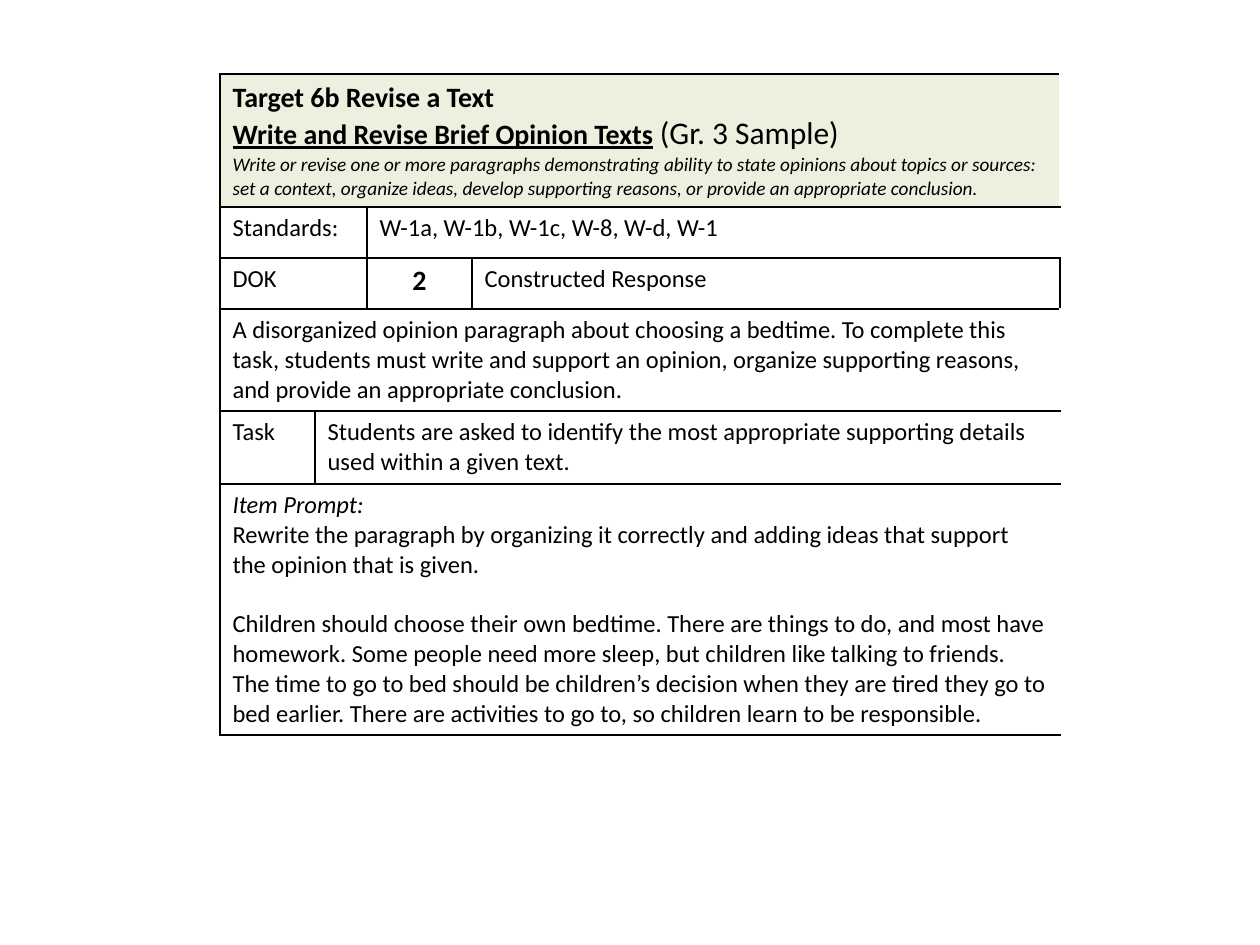
from dataclasses import dataclass

from lxml.etree import SubElement
from pptx import Presentation
from pptx.dml.color import RGBColor
from pptx.enum.text import PP_ALIGN
from pptx.oxml.ns import qn
from pptx.util import Pt

EMU_PER_PX = 914400 / 126


@dataclass(frozen=True)
class Theme:
    font: str = "Calibri"
    ink: str = "000000"
    heading_fill: str = "EBF1DE"
    body: int = 14
    heading: int = 16
    grade: int = 18
    note: int = 11
    border: int = 1
    prompt_gap: int = 17


THEME = Theme()
COLUMN_WIDTHS = (95, 52, 105, 588)
ROW_HEIGHTS = (133, 51, 51, 102, 73, 251)


def px(length):
    return round(length * EMU_PER_PX)


def write(cell, text, size=THEME.body, bold=False, italic=False, underline=False,
          align=PP_ALIGN.LEFT, space_before=0, same_line=False):
    """Add text to a cell, as a new paragraph unless same_line is set."""
    paragraph = cell.text_frame.paragraphs[-1]
    if paragraph.runs and not same_line:
        paragraph = cell.text_frame.add_paragraph()
    if not same_line:
        paragraph.alignment = align
        paragraph.space_before = Pt(space_before)
    run = paragraph.add_run()
    run.text = text
    font = run.font
    font.name, font.size = THEME.font, Pt(size)
    font.bold, font.italic, font.underline = bold, italic, underline
    font.color.rgb = RGBColor.from_string(THEME.ink)


def set_borders(cell, sides):
    properties = cell._tc.get_or_add_tcPr()
    for position, side in enumerate(sides):
        line = SubElement(properties, qn(f"a:ln{side}"), w=str(Pt(THEME.border)))
        fill = SubElement(line, qn("a:solidFill"))
        SubElement(fill, qn("a:srgbClr"), val=THEME.ink)
        properties.insert(position, line)


def add_grid(slide, left, top):
    table = slide.shapes.add_table(
        len(ROW_HEIGHTS), len(COLUMN_WIDTHS), px(left), px(top),
        px(sum(COLUMN_WIDTHS)), px(sum(ROW_HEIGHTS))).table
    table.first_row = table.horz_banding = False
    for column, width in zip(table.columns, COLUMN_WIDTHS):
        column.width = px(width)
    for row, height in zip(table.rows, ROW_HEIGHTS):
        row.height = px(height)
    return table


def split_row(table, row, *spans, fill=None):
    """Merge a row's columns by spans and return the first cell of each span."""
    starts = []
    first = 0
    for span in spans:
        last = first + span - 1
        start = table.cell(row, first)
        if span > 1:
            start.merge(table.cell(row, last))
        for column in range(first, last + 1):
            cell = table.cell(row, column)
            if fill:
                cell.fill.solid()
                cell.fill.fore_color.rgb = RGBColor.from_string(fill)
            else:
                cell.fill.background()
            sides = ["L"] if column == first else []
            sides += ["R"] if column == last else []
            set_borders(cell, sides + ["T", "B"])
        starts.append(start)
        first = last + 1
    return starts


def fill_heading(table):
    [heading] = split_row(table, 0, 4, fill=THEME.heading_fill)
    write(heading, "Target 6b Revise a Text", size=THEME.heading, bold=True)
    write(heading, "Write and Revise Brief Opinion Texts",
          size=THEME.heading, bold=True, underline=True)
    write(heading, " ", size=THEME.heading, same_line=True)
    write(heading, "(Gr. 3 Sample)", size=THEME.grade, same_line=True)
    write(heading, "Write or revise one or more paragraphs demonstrating ability to state "
          "opinions about topics or sources: set a context, organize ideas, develop "
          "supporting reasons, or provide an appropriate conclusion.",
          size=THEME.note, italic=True)


def fill_details(table):
    label, standards = split_row(table, 1, 2, 2)
    write(label, "Standards:")
    write(standards, "W-1a, W-1b, W-1c, W-8, W-d, W-1")

    label, level, response = split_row(table, 2, 2, 1, 1)
    write(label, "DOK")
    write(level, "2", size=THEME.heading, bold=True, align=PP_ALIGN.CENTER)
    write(response, "Constructed Response")

    [summary] = split_row(table, 3, 4)
    write(summary, "A disorganized opinion paragraph about choosing a bedtime. To complete "
          "this task, students must write and support an opinion, organize supporting "
          "reasons, and provide an appropriate conclusion.")

    label, task = split_row(table, 4, 1, 3)
    write(label, "Task")
    write(task, "Students are asked to identify the most appropriate supporting details "
          "used within a given text.")


def fill_prompt(table):
    [prompt] = split_row(table, 5, 4)
    write(prompt, "Item Prompt:", italic=True)
    write(prompt, "Rewrite the paragraph by organizing it correctly and adding ideas that "
          "support the opinion that is given.")
    write(prompt, "Children should choose their own bedtime. There are things to do, and "
          "most have homework. Some people need more sleep, but children like talking to "
          "friends. The time to go to bed should be children’s decision when they are "
          "tired they go to bed earlier. There are activities to go to, so children learn "
          "to be responsible.", space_before=THEME.prompt_gap)


def main():
    presentation = Presentation()
    presentation.slide_width, presentation.slide_height = px(1260), px(945)
    slide = presentation.slides.add_slide(presentation.slide_layouts[6])
    table = add_grid(slide, left=220, top=74)
    fill_heading(table)
    fill_details(table)
    fill_prompt(table)
    presentation.save("out.pptx")


if __name__ == "__main__":
    main()
